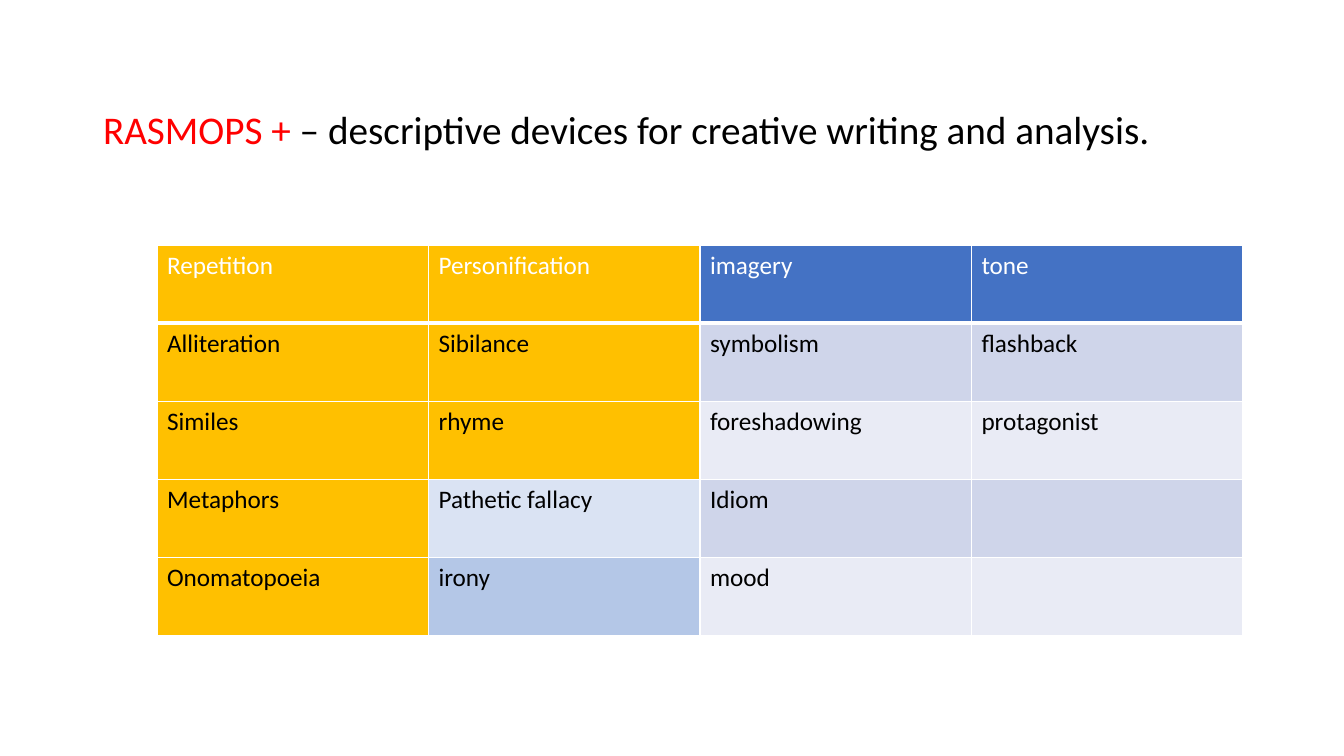
from lxml.etree import SubElement
from pptx import Presentation
from pptx.dml.color import RGBColor
from pptx.enum.text import MSO_ANCHOR, MSO_AUTO_SIZE, PP_ALIGN
from pptx.oxml.ns import qn
from pptx.util import Emu, Pt

# Content
TITLE = [("RASMOPS +", "FF0000"),
         (" – descriptive devices for creative writing and analysis.", "000000")]
DEVICES = [
    ["Repetition", "Personification", "imagery", "tone"],
    ["Alliteration", "Sibilance", "symbolism", "flashback"],
    ["Similes", "rhyme", "foreshadowing", "protagonist"],
    ["Metaphors", "Pathetic fallacy", "Idiom", ""],
    ["Onomatopoeia", "irony", "mood", ""],
]

# Look, with lengths in px
FONT = "Calibri"
SLIDE_W, SLIDE_H = 1344, 756
TITLE_BOX = (93, 100, 1171, 57)
TABLE_BOX = (157, 245, 1086, 391)
GOLD, HEADER, BANDS = "FFC000", "4472C4", ("E9EBF5", "CFD5EA")
SPECIAL_FILLS = {(3, 1): "DAE3F3", (4, 1): "B4C7E7"}


def px(n):
    return Emu(round(n * 914400 / 100.8))


def rgb(color):
    return RGBColor.from_string(color)


def add_run(p, text, size, color):
    r = p.add_run()
    r.text = text
    r.font.name, r.font.size, r.font.bold = FONT, Pt(size), False
    r.font.color.rgb = rgb(color)


def cell_fill(row, col):
    if (row, col) in SPECIAL_FILLS:
        return SPECIAL_FILLS[row, col]
    if col < 2:
        return GOLD
    return HEADER if row == 0 else BANDS[row % 2]


def add_borders(cell, row):
    widths = {"lnL": 1, "lnR": 1, "lnT": 3 if row == 1 else 1, "lnB": 3 if row == 0 else 1}
    tcPr = cell._tc.get_or_add_tcPr()
    for side, width in widths.items():
        ln = SubElement(tcPr, qn("a:" + side), w=str(Pt(width)))
        SubElement(SubElement(ln, qn("a:solidFill")), qn("a:srgbClr"), val="FFFFFF")


prs = Presentation()
prs.slide_width, prs.slide_height = px(SLIDE_W), px(SLIDE_H)
s = prs.slides.add_slide(prs.slide_layouts[5])

# Title
title = s.shapes.title
title.left, title.top, title.width, title.height = map(px, TITLE_BOX)
tf = title.text_frame
tf.word_wrap = True
tf.auto_size = MSO_AUTO_SIZE.NONE
tf.vertical_anchor = MSO_ANCHOR.TOP
p = tf.paragraphs[0]
p.alignment = PP_ALIGN.LEFT
for text, color in TITLE:
    add_run(p, text, 28, color)

# Table of devices
rows, cols = len(DEVICES), len(DEVICES[0])
table = s.shapes.add_table(rows, cols, *map(px, TABLE_BOX)).table
for i, words in enumerate(DEVICES):
    for j, word in enumerate(words):
        cell = table.cell(i, j)
        add_borders(cell, i)
        cell.fill.solid()
        cell.fill.fore_color.rgb = rgb(cell_fill(i, j))
        if word:
            add_run(cell.text_frame.paragraphs[0], word, 18, "FFFFFF" if i == 0 else "000000")

prs.save("out.pptx")
